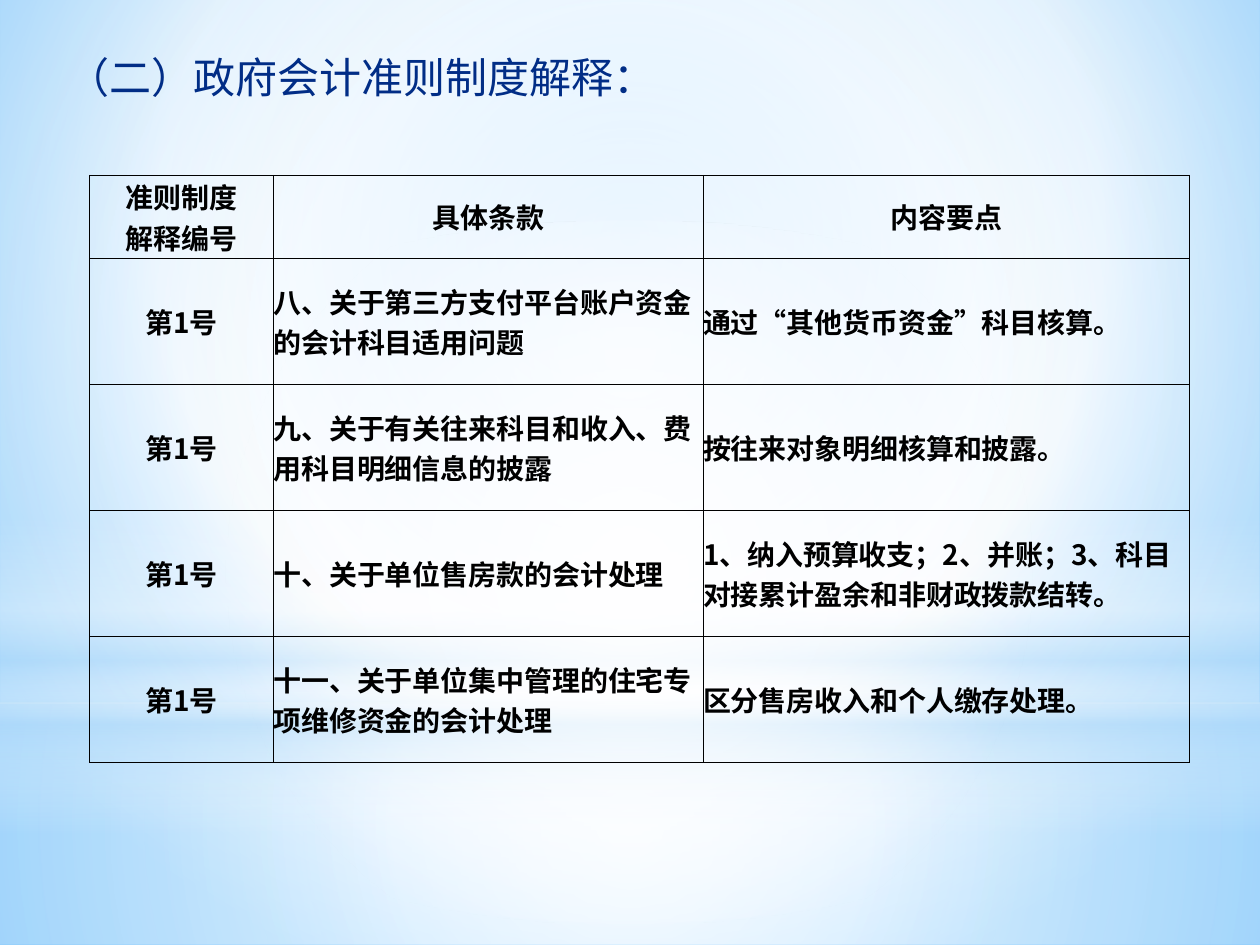
from copy import deepcopy
from dataclasses import dataclass

from lxml import etree
from pptx import Presentation
from pptx.dml import color
from pptx.enum import shapes, text
from pptx.oxml import ns
from pptx.util import Inches, Pt


@dataclass(frozen=True)
class Theme:
    font: str = "Noto Sans CJK SC"
    ink: str = "000000"
    white: str = "FFFFFF"
    haze: str = "B4DCFA"
    sky: str = "9ED5FF"
    deep_sky: str = "5BB9FF"
    title_top: str = "012D86"
    title_bottom: str = "0E2557"
    title_size: int = 24
    table_size: int = 16
    border: float = 0.5


THEME = Theme()
HEADINGS = ["准则制度\v解释编号", "具体条款", "内容要点"]
CLAUSES = [
    ("八、关于第三方支付平台账户资金的会计科目适用问题", "通过“其他货币资金”科目核算。"),
    ("九、关于有关往来科目和收入、费用科目明细信息的披露", "按往来对象明细核算和披露。"),
    ("十、关于单位售房款的会计处理", "1、纳入预算收支；2、并账；3、科目对接累计盈余和非财政拨款结转。"),
    ("十一、关于单位集中管理的住宅专项维修资金的会计处理", "区分售房收入和个人缴存处理。"),
]
COLUMN_WIDTHS = [1.46, 3.41, 3.86]
ROW_HEIGHTS = [0.66] + [1] * len(CLAUSES)


def sub(parent, tag, **attributes):
    return etree.SubElement(parent, ns.qn(tag), {k: str(v) for k, v in attributes.items()})


def set_gradient(fill, parent, stops, focus=None):
    """Stops are (position %, colour, opacity %); without a focus the blend runs downwards."""
    fill.solid()
    solid = parent.find(ns.qn("a:solidFill"))
    gradient = etree.Element(ns.qn("a:gradFill"), rotWithShape="1")
    stop_list = sub(gradient, "a:gsLst")
    for position, rgb, opacity in stops:
        stop = sub(stop_list, "a:gs", pos=position * 1000)
        sub(sub(stop, "a:srgbClr", val=rgb), "a:alpha", val=opacity * 1000)
    if focus:
        radial = sub(gradient, "a:path", path="circle")
        sub(radial, "a:fillToRect", **{side: value * 1000 for side, value in zip("ltrb", focus)})
    else:
        sub(gradient, "a:lin", ang=90 * 60000, scaled=0)
    parent.replace(solid, gradient)


def style_span(span, size, bold=False):
    for name, value in {"size": Pt(size), "bold": bold, "name": THEME.font}.items():
        setattr(span.font, name, value)
    sub(span.font._element, "a:ea", typeface=THEME.font)


def add_glow(page, kind, box, stops, focus=None):
    shape = page.shapes.add_shape(kind, *map(Inches, box))
    shape.shadow.inherit = False
    shape.line.fill.background()
    set_gradient(shape.fill, shape._element.spPr, stops, focus)


def add_backdrop(page, box):
    left, top, width, height = box
    white, haze = THEME.white, THEME.haze
    centre = (50, 50, 50, 50)
    horizon = 5.58
    rectangle, oval = shapes.MSO_SHAPE.RECTANGLE, shapes.MSO_SHAPE.OVAL

    fill = page.background.fill
    fill.solid()
    set_gradient(fill, page._element.cSld.bg.bgPr,
                 [(0, THEME.sky, 100), (60, white, 100), (100, THEME.deep_sky, 100)],
                 (20, 10, 20, 60))
    add_glow(page, rectangle, (left, top + horizon, width, height - horizon),
             [(0, white, 91), (37, white, 76), (100, haze, 79)], centre)
    add_glow(page, rectangle, (left, top, width, horizon),
             [(0, white, 89), (48, white, 62), (100, haze, 79)], centre)
    add_glow(page, rectangle, (left, top + 4.12, width, 2.5),
             [(0, white, 0), (29, white, 30), (45, haze, 40),
              (55, white, 26), (65, haze, 60), (100, white, 0)])
    add_glow(page, oval, (left, top + 1.75, width, horizon),
             [(0, white, 100), (56, white, 0)], centre)


def add_title(page, box, words):
    frame = page.shapes.add_textbox(*map(Inches, box)).text_frame
    frame.word_wrap = True
    frame.auto_size = text.MSO_AUTO_SIZE.SHAPE_TO_FIT_TEXT
    span = frame.paragraphs[0].add_run()
    span.text = words
    style_span(span, THEME.title_size)
    set_gradient(span.font.fill, span.font._element,
                 [(0, THEME.title_top, 100), (100, THEME.title_bottom, 100)])


def set_borders(cell):
    properties = cell._tc.get_or_add_tcPr()
    for index, side in enumerate("LRTB"):
        line = etree.Element(ns.qn(f"a:ln{side}"), w=str(Pt(THEME.border)))
        sub(sub(line, "a:solidFill"), "a:srgbClr", val=THEME.ink)
        properties.insert(index, line)


def fill_cell(cell, words, centred):
    for side in ("left", "top", "right", "bottom"):
        setattr(cell, f"margin_{side}", 0)
    cell.vertical_anchor = text.MSO_ANCHOR.MIDDLE
    cell.fill.background()
    set_borders(cell)
    para = cell.text_frame.paragraphs[0]
    para.text = words
    para.alignment = text.PP_ALIGN.CENTER if centred else text.PP_ALIGN.LEFT
    for span in para.runs:
        style_span(span, THEME.table_size, bold=True)
        span.font.color.rgb = color.RGBColor.from_string(THEME.ink)
    for line_break in para._p.findall(ns.qn("a:br")):
        line_break.insert(0, deepcopy(para.runs[0].font._element))


def add_clause_table(page, box):
    rows = [HEADINGS] + [("第1号", *clause) for clause in CLAUSES]
    table = page.shapes.add_table(len(rows), len(HEADINGS), *map(Inches, box)).table
    table.first_row = table.horz_banding = False
    for column, width in zip(table.columns, COLUMN_WIDTHS):
        column.width = Inches(width)
    for row, height in zip(table.rows, ROW_HEIGHTS):
        row.height = Inches(height)
    for r, row in enumerate(rows):
        for c, words in enumerate(row):
            fill_cell(table.cell(r, c), words, centred=r == 0 or c == 0)


def main():
    deck = Presentation()
    deck.slide_width, deck.slide_height = Inches(10), Inches(7.5)
    page = deck.slides.add_slide(deck.slide_layouts[6])
    add_backdrop(page, (0, 0, 10, 7.5))
    add_title(page, (0.44, 0.36, 5.74, 0.5), "（二）政府会计准则制度解释：")
    add_clause_table(page, (0.71, 1.39, sum(COLUMN_WIDTHS), sum(ROW_HEIGHTS)))
    deck.save("out.pptx")


if __name__ == "__main__":
    main()
